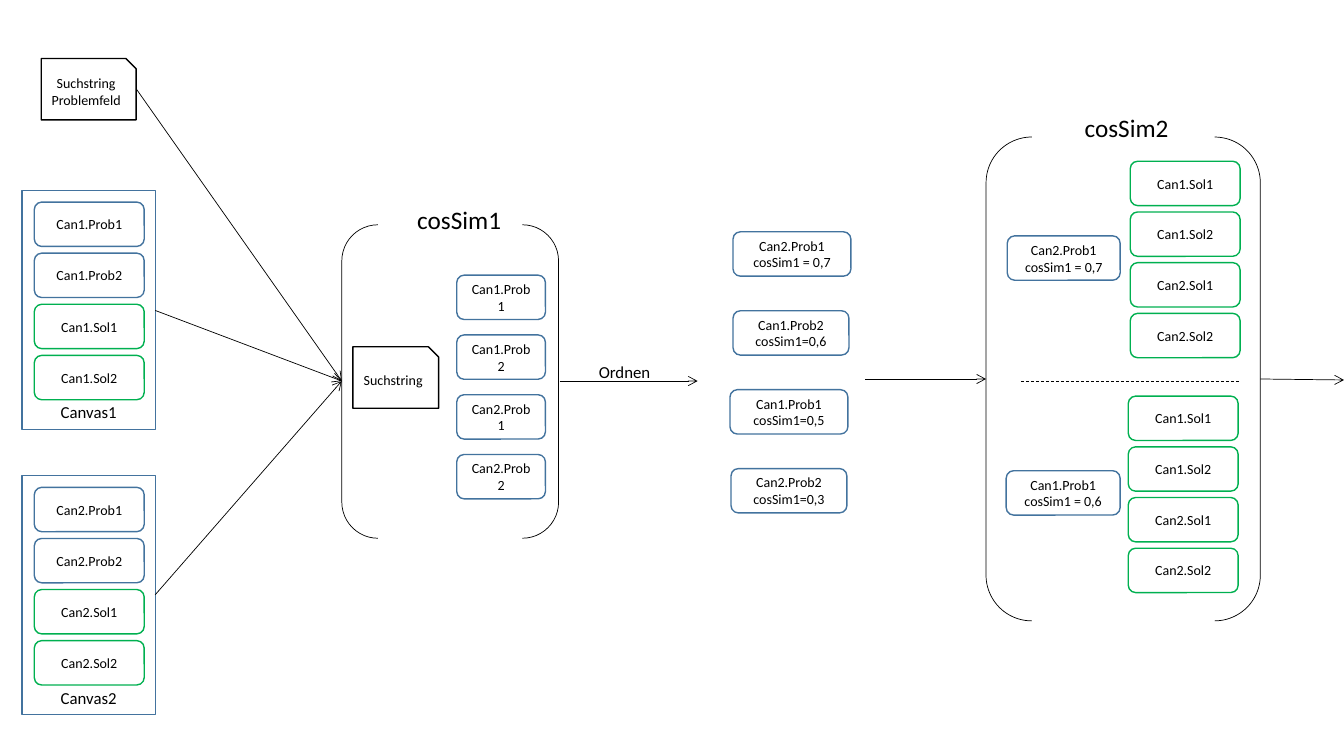
from dataclasses import dataclass

from lxml import etree
from pptx import Presentation
from pptx.dml.color import RGBColor
from pptx.enum.dml import MSO_LINE
from pptx.enum.shapes import MSO_CONNECTOR, MSO_SHAPE
from pptx.enum.text import MSO_ANCHOR, MSO_AUTO_SIZE, PP_ALIGN
from pptx.oxml.ns import qn
from pptx.util import Inches, Pt


@dataclass(frozen=True)
class Theme:
    font: str = "Calibri"
    ink: RGBColor = RGBColor(0x00, 0x00, 0x00)
    problem: RGBColor = RGBColor(0x43, 0x73, 0x9E)
    solution: RGBColor = RGBColor(0x00, 0xB0, 0x50)
    heading_size: Pt = Pt(18)
    label_size: Pt = Pt(12)
    card_size: Pt = Pt(10)
    outline: Pt = Pt(1)
    hairline: Pt = Pt(0.5)


THEME = Theme()
CARD_HEIGHT = 0.44
SOLUTIONS = ["Can1.Sol1", "Can1.Sol2", "Can2.Sol1", "Can2.Sol2"]


def write(frame, text, size, align):
    frame.text = text
    for paragraph in frame.paragraphs:
        paragraph.alignment = align
        paragraph.font.name = THEME.font
        paragraph.font.size = size
        paragraph.font.color.rgb = THEME.ink


def add_outline(shapes, kind, left, top, width, height, color, weight=THEME.outline):
    """Add an unfilled preset shape."""
    shape = shapes.add_shape(kind, Inches(left), Inches(top), Inches(width), Inches(height))
    shape.shadow.inherit = False
    shape.fill.background()
    shape.line.color.rgb = color
    shape.line.width = weight
    return shape


def add_card(shapes, text, left, top, width=1.09, height=CARD_HEIGHT,
             color=THEME.problem, kind=MSO_SHAPE.ROUNDED_RECTANGLE):
    card = add_outline(shapes, kind, left, top, width, height, color)
    card.text_frame.vertical_anchor = MSO_ANCHOR.MIDDLE
    write(card.text_frame, text, THEME.card_size, PP_ALIGN.CENTER)


def add_search_note(shapes, text, left, top, width):
    add_card(shapes, text, left, top, width, 0.61, THEME.ink, MSO_SHAPE.SNIP_1_RECTANGLE)


def add_solutions(shapes, names, left, top, pitch):
    for row, name in enumerate(names):
        add_card(shapes, name, left, top + row * pitch, color=THEME.solution)


def add_canvas(shapes, number, top):
    """Add a grouped canvas with two problems and two solutions."""
    left, pitch = 0.22, 0.507
    members = shapes.add_group_shape().shapes
    frame = add_outline(members, MSO_SHAPE.RECTANGLE, left, top, 1.32, 2.37, THEME.problem)
    frame.text_frame.vertical_anchor = MSO_ANCHOR.BOTTOM
    frame.text_frame.margin_bottom = Inches(0.07)
    write(frame.text_frame, f"Canvas{number}", THEME.label_size, PP_ALIGN.CENTER)
    first = top + 0.115
    for row in range(2):
        add_card(members, f"Can{number}.Prob{row + 1}", left + 0.12, first + row * pitch)
    names = [f"Can{number}.Sol{index}" for index in (1, 2)]
    add_solutions(members, names, left + 0.12, first + 2 * pitch, pitch)


def add_label(shapes, text, left, top, width, height, size):
    label = shapes.add_textbox(Inches(left), Inches(top), Inches(width), Inches(height))
    label.text_frame.word_wrap = False
    label.text_frame.auto_size = MSO_AUTO_SIZE.SHAPE_TO_FIT_TEXT
    write(label.text_frame, text, size, PP_ALIGN.LEFT)


def add_brackets(shapes, heading, left, top, width, height, heading_left, heading_top):
    add_outline(shapes, MSO_SHAPE.DOUBLE_BRACKET, left, top, width, height,
                THEME.ink, THEME.hairline)
    add_label(shapes, heading, heading_left, heading_top, 1.04, 0.4, THEME.heading_size)


def add_line(shapes, start, end):
    line = shapes.add_connector(MSO_CONNECTOR.STRAIGHT, *map(Inches, start + end))
    line.line.color.rgb = THEME.ink
    line.line.width = THEME.hairline
    etree.SubElement(line._element.spPr, qn("a:effectLst"))
    return line


def add_arrow(shapes, start, end):
    arrow = add_line(shapes, start, end)
    etree.SubElement(arrow.line._get_or_add_ln(), qn("a:tailEnd"), type="arrow")


def add_first_comparison(shapes):
    add_search_note(shapes, "Suchstring", 3.5, 3.44, 0.85)
    problems = ["Can1.Prob1", "Can1.Prob2", "Can2.Prob1", "Can2.Prob2"]
    for row, name in enumerate(problems):
        add_card(shapes, name, 4.53, 2.73 + row * 0.593, 0.88)
    add_brackets(shapes, "cosSim1", 3.39, 2.23, 2.15, 3.11, 4.04, 1.98)


def add_ranking(shapes):
    ranking = [
        ("Can2.Prob1\ncosSim1 = 0,7", 7.27, 1.17),
        ("Can1.Prob2\ncosSim1=0,6", 7.27, 1.15),
        ("Can1.Prob1\ncosSim1=0,5", 7.24, 1.17),
        ("Can2.Prob2\ncosSim1=0,3", 7.25, 1.15),
    ]
    for row, (text, left, width) in enumerate(ranking):
        add_card(shapes, text, left, 2.3 + row * 0.783, width)


def add_second_comparison(shapes):
    add_brackets(shapes, "cosSim2", 9.78, 1.36, 2.72, 4.8, 10.66, 1.07)
    add_card(shapes, "Can2.Prob1\ncosSim1 = 0,7", 9.99, 2.34, 1.12)
    add_solutions(shapes, SOLUTIONS, 11.21, 1.6, 0.503)
    add_card(shapes, "Can1.Prob1\ncosSim1 = 0,6", 9.98, 4.67, 1.13)
    add_solutions(shapes, SOLUTIONS, 11.19, 3.93, 0.503)
    divider = add_line(shapes, (10.13, 3.78), (12.29, 3.78))
    divider.line.dash_style = MSO_LINE.DASH


def add_flow(shapes):
    comparison_entry = (3.39, 3.78)
    for source in [(1.35, 0.88), (1.54, 3.08), (1.54, 5.9)]:
        add_arrow(shapes, source, comparison_entry)
    add_arrow(shapes, (5.55, 3.78), (6.92, 3.78))
    add_label(shapes, "Ordnen", 5.84, 3.54, 0.72, 0.3, THEME.label_size)
    add_arrow(shapes, (8.58, 3.76), (9.78, 3.76))
    add_arrow(shapes, (12.5, 3.76), (13.33, 3.77))


def main():
    deck = Presentation()
    deck.slide_width, deck.slide_height = Inches(13.33), Inches(7.5)
    blank_layout = deck.slide_layouts[6]
    shapes = deck.slides.add_slide(blank_layout).shapes
    add_canvas(shapes, 1, 1.89)
    add_canvas(shapes, 2, 4.72)
    add_first_comparison(shapes)
    add_search_note(shapes, "Suchstring\nProblemfeld", 0.41, 0.58, 0.94)
    add_ranking(shapes)
    add_second_comparison(shapes)
    add_flow(shapes)
    deck.save("out.pptx")


if __name__ == "__main__":
    main()
